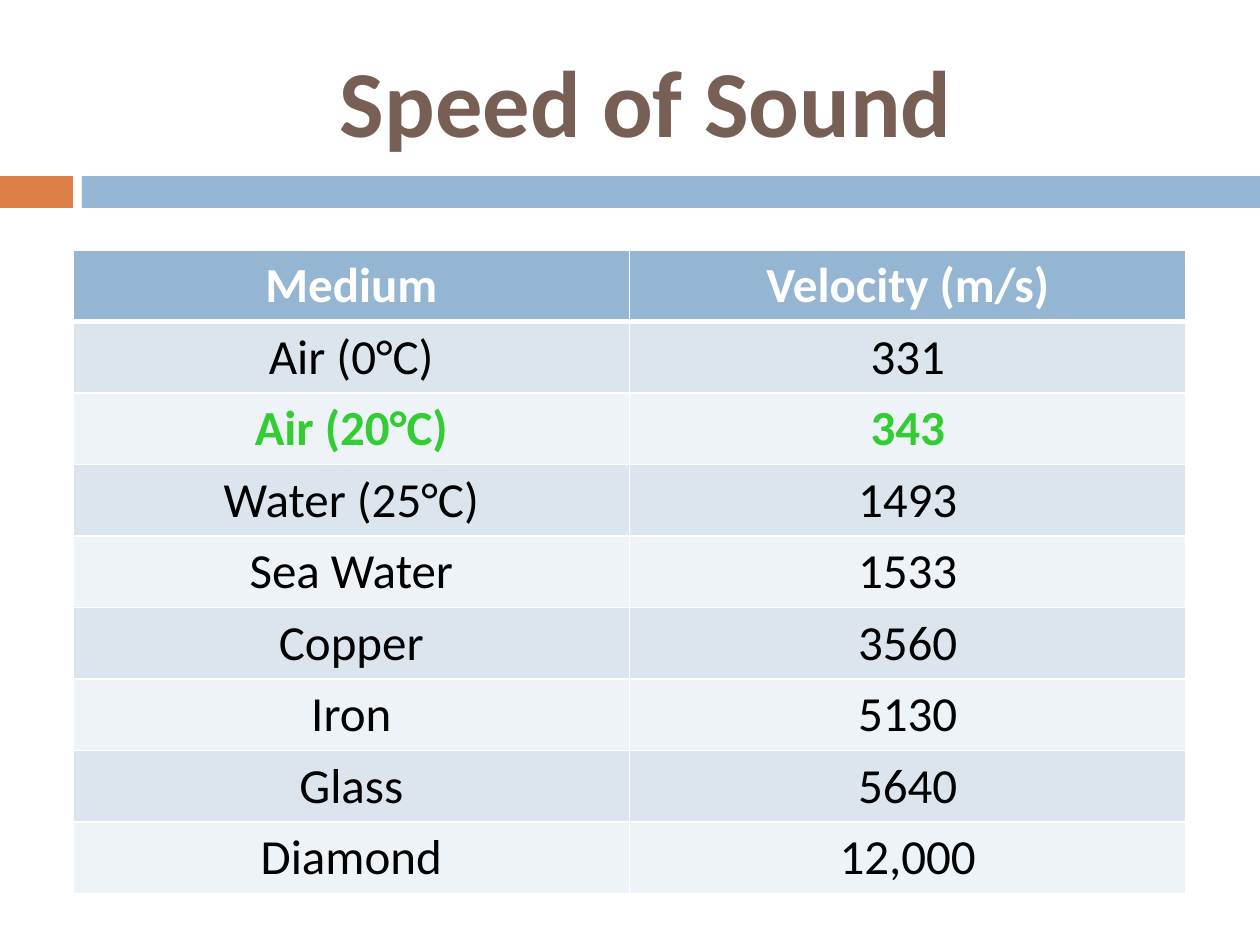
from dataclasses import dataclass

from lxml.etree import SubElement
from pptx import Presentation
from pptx.dml.color import RGBColor
from pptx.enum.shapes import MSO_SHAPE as Shape
from pptx.enum.text import MSO_ANCHOR as Anchor, PP_ALIGN as Align
from pptx.oxml.ns import qn
from pptx.util import Emu, Pt

SCALE = 914400 / 126  # EMU in one px

ORANGE = RGBColor(0xDD, 0x80, 0x47)
BLUE = RGBColor(0x94, 0xB6, 0xD2)
BROWN = RGBColor(0x77, 0x5F, 0x55)
GREEN = RGBColor(0x33, 0xCC, 0x33)
WHITE = RGBColor(0xFF, 0xFF, 0xFF)
BLACK = RGBColor(0x00, 0x00, 0x00)
DARK = RGBColor(0xDC, 0xE5, 0xEE)
PALE = RGBColor(0xEE, 0xF3, 0xF7)


@dataclass
class Box:
    left: int
    top: int
    width: int
    height: int

    def emu(self) -> list[Emu]:
        return [px(n) for n in (self.left, self.top, self.width, self.height)]


@dataclass
class Bar:
    box: Box
    color: RGBColor


@dataclass
class Row:
    medium: str
    speed: str
    color: RGBColor = BLACK
    bold: bool = False


BARS = [
    Bar(Box(0, 176, 73, 32), ORANGE),
    Bar(Box(82, 176, 1178, 32), BLUE),
]
TITLE = Box(84, 32, 1124, 136)
GRID = Box(73, 250, 1113, 639)
ROWS = [
    Row("Medium", "Velocity (m/s)", WHITE, True),
    Row("Air (0°C)", "331"),
    Row("Air (20°C)", "343", GREEN, True),
    Row("Water (25°C)", "1493"),
    Row("Sea Water", "1533"),
    Row("Copper", "3560"),
    Row("Iron", "5130"),
    Row("Glass", "5640"),
    Row("Diamond", "12,000"),
]


def px(count: int) -> Emu:
    return Emu(round(count * SCALE))


def write(frame, text: str, size: int, color: RGBColor, bold: bool) -> None:
    para = frame.paragraphs[0]
    para.alignment = Align.CENTER
    run = para.add_run()
    run.text = text
    look = {"name": "Calibri", "size": Pt(size), "bold": bold}
    for key, value in look.items():
        setattr(run.font, key, value)
    run.font.color.rgb = color


def draw_bar(slide, bar: Bar) -> None:
    shape = slide.shapes.add_shape(Shape.RECTANGLE, *bar.box.emu())
    shape.shadow.inherit = False
    shape.fill.solid()
    shape.fill.fore_color.rgb = bar.color
    shape.line.fill.background()


def draw_title(slide, box: Box, text: str) -> None:
    frame = slide.shapes.add_textbox(*box.emu()).text_frame
    frame.word_wrap = True
    frame.vertical_anchor = Anchor.MIDDLE
    write(frame, text, 54, BROWN, True)


def edge(cell, top: int, base: int) -> None:
    """Give the cell white borders; top and base are widths in points."""
    props = cell._tc.get_or_add_tcPr()
    for side, width in {"L": 1, "R": 1, "T": top, "B": base}.items():
        line = SubElement(props, qn(f"a:ln{side}"), w=str(Pt(width)))
        fill = SubElement(line, qn("a:solidFill"))
        SubElement(fill, qn("a:srgbClr"), val=str(WHITE))


def draw_table(slide, box: Box, rows: list[Row]) -> None:
    table = slide.shapes.add_table(len(rows), 2, *box.emu()).table
    for i, row in enumerate(rows):
        table.rows[i].height = px(box.height // len(rows))
        shade = BLUE if i == 0 else DARK if i % 2 else PALE
        for cell, text in zip(table.rows[i].cells, (row.medium, row.speed)):
            edge(cell, 3 if i == 1 else 1, 3 if i == 0 else 1)
            cell.fill.solid()
            cell.fill.fore_color.rgb = shade
            cell.vertical_anchor = Anchor.MIDDLE
            write(cell.text_frame, text, 28, row.color, row.bold)


def main() -> None:
    deck = Presentation()
    deck.slide_width, deck.slide_height = px(1260), px(945)
    slide = deck.slides.add_slide(deck.slide_layouts[6])
    for bar in BARS:
        draw_bar(slide, bar)
    draw_title(slide, TITLE, "Speed of Sound")
    draw_table(slide, GRID, ROWS)
    deck.save("out.pptx")


if __name__ == "__main__":
    main()
